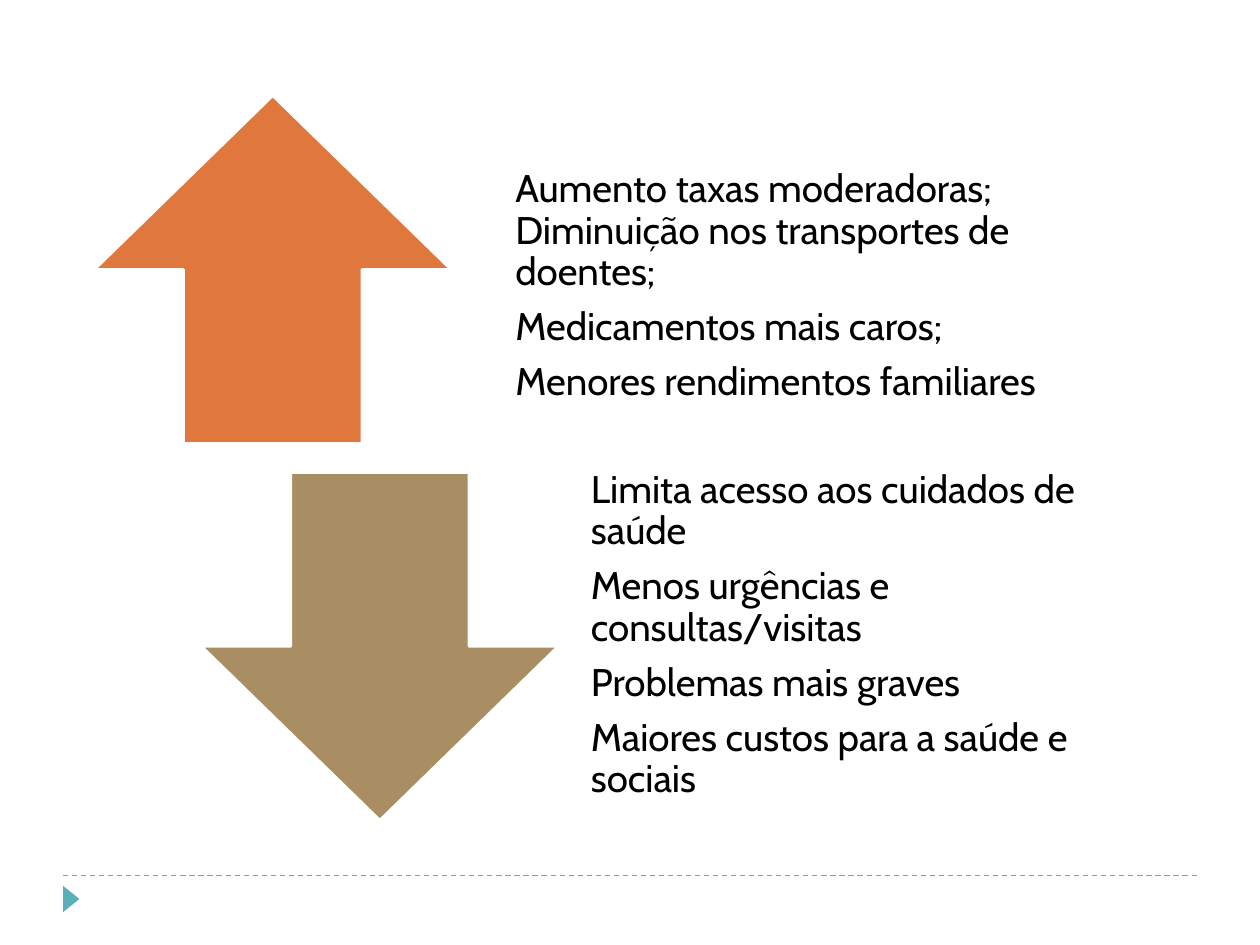
from dataclasses import dataclass

import pptx
import pptx.dml.color
import pptx.enum.dml
import pptx.enum.shapes
import pptx.enum.text
import pptx.oxml
import pptx.oxml.ns
import pptx.util
from pptx.dml.color import RGBColor
from pptx.enum.shapes import MSO_SHAPE
from pptx.util import Inches

TEAL = RGBColor(0x59, 0xB0, 0xB9)
ORANGE = RGBColor(0xE0, 0x77, 0x3C)
TAN = RGBColor(0xA9, 0x8D, 0x63)
WHITE = RGBColor(0xFF, 0xFF, 0xFF)
BLACK = RGBColor(0, 0, 0)

FONT = "Cabin"
TEXT_SIZE = 22
ARROW_WIDTH, TEXT_WIDTH, BLOCK_HEIGHT = 2.83, 4.81, 2.76


@dataclass
class Trend:
    direction: MSO_SHAPE
    color: RGBColor
    arrow_left: float
    arrow_top: float
    text_left: float
    text_top: float
    effects: list[str]


TRENDS = [
    Trend(MSO_SHAPE.UP_ARROW, ORANGE, 0.75, 0.76, 3.92, 0.98, [
        "Aumento taxas moderadoras; Diminuição nos transportes de doentes;",
        "Medicamentos mais caros;",
        "Menores rendimentos familiares",
    ]),
    Trend(MSO_SHAPE.DOWN_ARROW, TAN, 1.6, 3.75, 4.52, 3.75, [
        "Limita acesso aos cuidados de saúde",
        "Menos urgências e consultas/visitas",
        "Problemas mais graves",
        "Maiores custos para a saúde e sociais",
    ]),
]


def draw_footer(slide: pptx.slide.Slide) -> None:
    rule = slide.shapes.add_connector(
        pptx.enum.shapes.MSO_CONNECTOR.STRAIGHT,
        Inches(0.5), Inches(6.95), Inches(9.5), Inches(6.95))
    rule.line.color.rgb = TEAL
    rule.line.width = pptx.util.Pt(0.75)
    rule.line.dash_style = pptx.enum.dml.MSO_LINE.DASH
    properties = rule._element.spPr
    properties.append(pptx.oxml.parse_xml(
        f"<a:effectLst {pptx.oxml.ns.nsdecls('a')}/>"))

    marker = slide.shapes.add_shape(
        MSO_SHAPE.ISOSCELES_TRIANGLE,
        Inches(0.46), Inches(7.07), Inches(0.21), Inches(0.13))
    marker.rotation = 90
    marker.shadow.inherit = False
    marker.fill.solid()
    marker.fill.fore_color.rgb = TEAL
    marker.line.fill.background()


def draw_trend(slide: pptx.slide.Slide, trend: Trend) -> None:
    # Arrow
    arrow = slide.shapes.add_shape(
        trend.direction, Inches(trend.arrow_left), Inches(trend.arrow_top),
        Inches(ARROW_WIDTH), Inches(BLOCK_HEIGHT))
    arrow.shadow.inherit = False
    arrow.fill.solid()
    arrow.fill.fore_color.rgb = trend.color
    arrow.line.color.rgb = WHITE
    arrow.line.width = pptx.util.Pt(1.5)

    # Effects beside the arrow
    effects = slide.shapes.add_textbox(
        Inches(trend.text_left), Inches(trend.text_top),
        Inches(TEXT_WIDTH), Inches(BLOCK_HEIGHT)).text_frame
    effects.word_wrap = True
    effects.vertical_anchor = pptx.enum.text.MSO_ANCHOR.MIDDLE
    effects.margin_left = effects.margin_right = Inches(0.17)
    effects.margin_top, effects.margin_bottom = Inches(0), Inches(0.17)
    for index, effect in enumerate(trend.effects):
        paragraph = effects.add_paragraph() if index else effects.paragraphs[0]
        paragraph.line_spacing = 0.9
        paragraph.space_after = pptx.util.Pt(0.35 * TEXT_SIZE)
        run = paragraph.add_run()
        run.text = effect
        run.font.name = FONT
        run.font.size = pptx.util.Pt(TEXT_SIZE)
        run.font.color.rgb = BLACK


def main() -> None:
    deck = pptx.Presentation()
    deck.slide_width, deck.slide_height = Inches(10), Inches(7.5)
    slide = deck.slides.add_slide(deck.slide_layouts[6])
    draw_footer(slide)
    for trend in TRENDS:
        draw_trend(slide, trend)
    deck.save("out.pptx")


if __name__ == "__main__":
    main()
